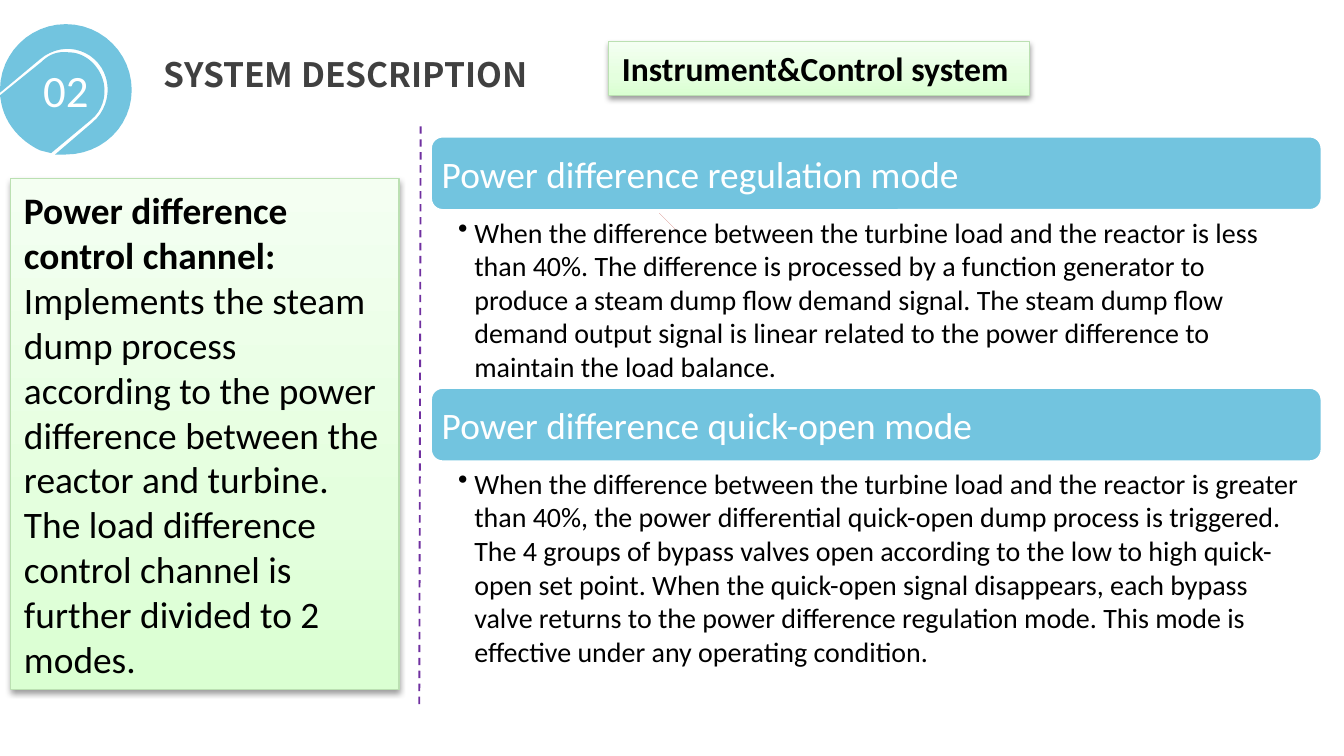
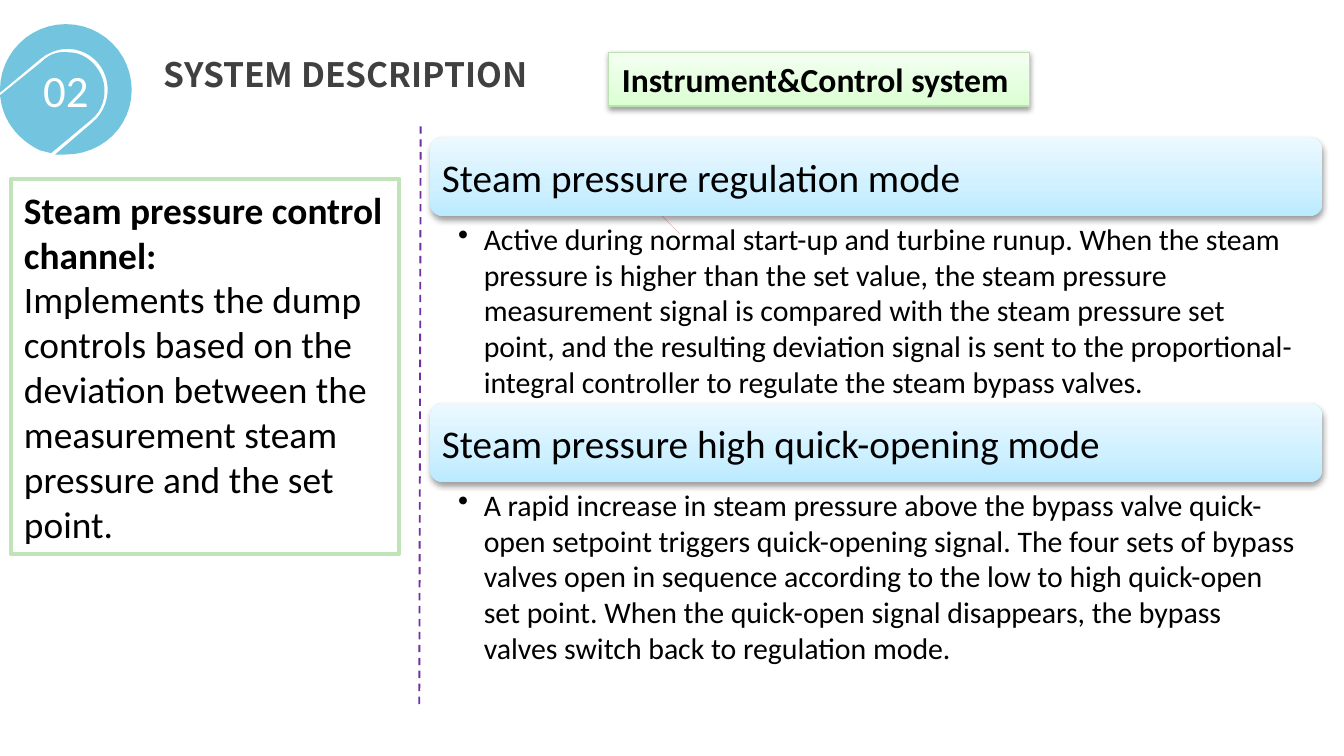
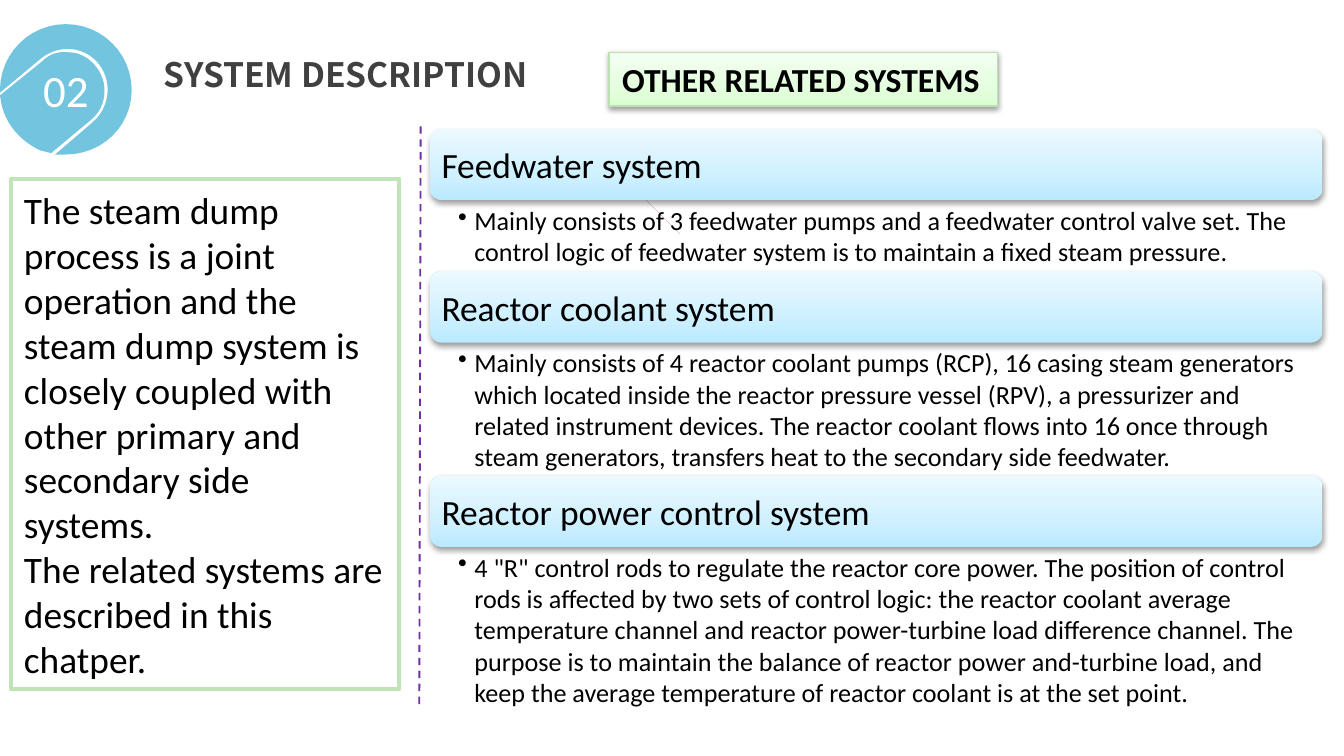
from copy import deepcopy

from lxml.etree import SubElement
from pptx import Presentation
from pptx.dml.color import RGBColor
from pptx.enum.dml import MSO_LINE
from pptx.enum.shapes import MSO_CONNECTOR, MSO_SHAPE
from pptx.enum.text import MSO_ANCHOR, MSO_AUTO_SIZE, PP_ALIGN
from pptx.oxml.ns import qn
from pptx.util import Inches, Pt

BLUE = RGBColor(0x72, 0xC4, 0xDF)
WHITE = RGBColor(0xFF, 0xFF, 0xFF)
BLACK = RGBColor(0x00, 0x00, 0x00)
TITLE_GREY = RGBColor(0x40, 0x40, 0x40)
RED = RGBColor(0xB7, 0x37, 0x2A)
PURPLE = RGBColor(0x70, 0x30, 0xA0)
GREEN_EDGE = RGBColor(0xBB, 0xE0, 0xB2)
PANEL_EDGE = RGBColor(0xC0, 0xE4, 0xB7)
GREEN_STOPS = (RGBColor(0xDA, 0xFF, 0xD2), RGBColor(0xE4, 0xFF, 0xDE), RGBColor(0xF4, 0xFF, 0xF2))
SKY_STOPS = (RGBColor(0xBA, 0xEA, 0xFF), RGBColor(0xCE, 0xF0, 0xFF), RGBColor(0xEC, 0xF9, 0xFF))
STOP_POSITIONS = (0, 0.35, 1)

BODY_FONT = "Calibri"
TITLE_FONT = "Noto Sans CJK SC"

# Each contour is a start point, then lines (one point) and curves (three points).
BADGE_CONTOURS = [
    [(0.51, 0.21),
     [(0.59, 0.21), (0.66, 0.25), (0.71, 0.31)],
     [(0.81, 0.43), (0.8, 0.61), (0.68, 0.71)],
     [(0.38, 0.96)], [(0.3, 0.94)],
     [(0.15, 0.87), (0.04, 0.74), (0.01, 0.59)],
     [(0, 0.53)], [(0.31, 0.28)],
     [(0.37, 0.22), (0.44, 0.2), (0.51, 0.21)]],
    [(0.49, 0),
     [(0.76, 0), (0.98, 0.22), (0.98, 0.49)],
     [(0.98, 0.76), (0.76, 0.97), (0.49, 0.97)],
     [(0.41, 0.97)], [(0.69, 0.73)],
     [(0.82, 0.62), (0.84, 0.42), (0.73, 0.29)],
     [(0.62, 0.16), (0.43, 0.15), (0.3, 0.26)],
     [(0, 0.51)], [(0, 0.49)],
     [(0, 0.22), (0.22, 0), (0.49, 0)]],
]

SLIDES = [
    dict(
        topic="Instrument&Control system", topic_box=(4.53, 0.31, 3.13, 0.4),
        panel=[[("Power difference control channel: ", True),
                ("Implements the steam dump process according to the power difference between "
                 "the reactor and turbine. The load difference control channel is further "
                 "divided to 2 modes.", False)]],
        panel_height=3.8, panel_shaded=True,
        top=1.01, heading_height=0.56, heading_size=20, body_size=15, indent=0.12, shaded=False,
        sections=[
            ("Power difference regulation mode", 1.31,
             "When the difference between the turbine load and the reactor is less than 40%. The "
             "difference is processed by a function generator to produce a steam dump flow demand "
             "signal. The steam dump flow demand output signal is linear related to the power "
             "difference to maintain the load balance."),
            ("Power difference quick-open mode", 1.56,
             "When the difference between the turbine load and the reactor is greater than 40%, "
             "the power differential quick-open dump process is triggered. The 4 groups of bypass "
             "valves open according to the low to high quick-open set point. When the quick-open "
             "signal disappears, each bypass valve returns to the power difference regulation "
             "mode. This mode is effective under any operating condition."),
        ]),
    dict(
        topic="Instrument&Control system", topic_box=(4.53, 0.39, 3.13, 0.4),
        panel=[[("Steam pressure control channel:", True)],
               [("Implements the dump controls based on the deviation between the measurement "
                 "steam pressure and the set point.", False)]],
        panel_height=2.79, panel_shaded=False,
        top=1.02, heading_height=0.59, heading_size=21, body_size=16, indent=0.19, shaded=True,
        sections=[
            ("Steam pressure regulation mode", 1.39,
             "Active during normal start-up and turbine runup. When the steam pressure is higher "
             "than the set value, the steam pressure measurement signal is compared with the "
             "steam pressure set point, and the resulting deviation signal is sent to the "
             "proportional-integral controller to regulate the steam bypass valves."),
            ("Steam pressure high quick-opening mode", 1.4,
             "A rapid increase in steam pressure above the bypass valve quick-open setpoint "
             "triggers quick-opening signal. The four sets of bypass valves open in sequence "
             "according to the low to high quick-open set point. When the quick-open signal "
             "disappears, the bypass valves switch back to regulation mode."),
        ]),
    dict(
        topic="OTHER RELATED SYSTEMS", topic_box=(4.53, 0.39, 2.89, 0.4),
        panel=[[("The steam dump process is a joint operation and the steam dump system is "
                 "closely coupled with other primary and secondary side systems.", False)],
               [("The related systems are described in this chatper.", False)]],
        panel_height=3.8, panel_shaded=False,
        top=0.96, heading_height=0.53, heading_size=19, body_size=14, indent=0.12, shaded=True,
        sections=[
            ("Feedwater system", 0.53,
             "Mainly consists of 3 feedwater pumps and a feedwater control valve set. The control "
             "logic of feedwater system is to maintain a fixed steam pressure."),
            ("Reactor coolant system", 0.99,
             "Mainly consists of 4 reactor coolant pumps (RCP), 16 casing steam generators which "
             "located inside the reactor pressure vessel (RPV), a pressurizer and related "
             "instrument devices. The reactor coolant flows into 16 once through steam "
             "generators, transfers heat to the secondary side feedwater."),
            ("Reactor power control system", 1.22,
             "4 \"R\" control rods to regulate the reactor core power. The position of control "
             "rods is affected by two sets of control logic: the reactor coolant average "
             "temperature channel and reactor power-turbine load difference channel. The purpose "
             "is to maintain the balance of reactor power and-turbine load, and keep the average "
             "temperature of reactor coolant is at the set point."),
        ]),
]


def inches(*values):
    return [Inches(value) for value in values]


def style_font(paragraph, size, color, name=BODY_FONT, bold=None):
    font = paragraph.font
    font.size, font.name, font.bold = Pt(size), name, bold
    font.color.rgb = color


def set_frame(frame, insets=(0.1, 0.05, 0.1, 0.05), anchor=MSO_ANCHOR.TOP, grow=False):
    frame.word_wrap = True
    frame.vertical_anchor = anchor
    frame.auto_size = MSO_AUTO_SIZE.SHAPE_TO_FIT_TEXT if grow else MSO_AUTO_SIZE.NONE
    (frame.margin_left, frame.margin_top,
     frame.margin_right, frame.margin_bottom) = inches(*insets)


def set_look(shape, fill, edge=None, edge_width=0.75):
    shape.shadow.inherit = False
    shape.fill.solid()
    shape.fill.fore_color.rgb = fill
    if edge is None:
        shape.line.fill.background()
    else:
        shape.line.color.rgb = edge
        shape.line.width = Pt(edge_width)


def shade(shape, colors):
    """Fill from the bottom up with a three-stop gradient and drop a soft shadow."""
    shape.fill.gradient()
    shape.fill.gradient_angle = 90
    properties = shape._element.spPr
    stop_list = properties.find(".//" + qn("a:gsLst"))
    stop_list.append(deepcopy(stop_list[0]))
    for stop, position, color in zip(shape.fill.gradient_stops, STOP_POSITIONS, colors):
        stop.position = position
        stop.color.rgb = color
    shadow = SubElement(properties.find(qn("a:effectLst")), qn("a:outerShdw"),
                        blurRad=str(Pt(3.1)), dist=str(Pt(1.6)), dir="5400000", rotWithShape="0")
    shadow_color = SubElement(shadow, qn("a:srgbClr"), val=str(BLACK))
    SubElement(shadow_color, qn("a:alpha"), val="38000")


def flatten(contour, steps=12):
    """Return the contour as points in EMU, with its curves cut into short lines."""
    points = [contour[0]]
    for segment in contour[1:]:
        if len(segment) == 1:
            points += segment
            continue
        knots = [points[-1], *segment]
        for step in range(1, steps + 1):
            t = step / steps
            weights = ((1 - t) ** 3, 3 * t * (1 - t) ** 2, 3 * t * t * (1 - t), t ** 3)
            points.append(tuple(sum(weight * knot[axis] for weight, knot in zip(weights, knots))
                                for axis in (0, 1)))
    return [inches(*point) for point in points]


def add_outline(slide, left, top, contours, color):
    first, *others = [flatten(contour) for contour in contours]
    builder = slide.shapes.build_freeform(*first[0])
    builder.add_line_segments(first[1:], close=True)
    for points in others:
        builder.move_to(*points[0])
        builder.add_line_segments(points[1:], close=True)
    shape = builder.convert_to_shape(*inches(left, top))
    set_look(shape, color)
    return shape


def add_header(slide, left, top):
    badge = add_outline(slide, left, top, BADGE_CONTOURS, BLUE)
    set_frame(badge.text_frame, anchor=MSO_ANCHOR.MIDDLE)
    number = badge.text_frame.paragraphs[0]
    number.text = "02"
    number.alignment = PP_ALIGN.CENTER
    style_font(number, 24, WHITE)

    title_box = slide.shapes.add_textbox(*inches(left + 1.22, top + 0.13, 4.64, 0.39))
    set_frame(title_box.text_frame, insets=(0, 0, 0, 0), grow=True)
    title = title_box.text_frame.paragraphs[0]
    title.text = "SYSTEM DESCRIPTION"
    title.line_spacing = 1.3
    style_font(title, 18, TITLE_GREY, TITLE_FONT, bold=True)


def add_heading(slide, box, text, size, shaded):
    heading = slide.shapes.add_shape(MSO_SHAPE.ROUNDED_RECTANGLE, *inches(*box))
    if shaded:
        set_look(heading, WHITE)
        shade(heading, SKY_STOPS)
    else:
        set_look(heading, BLUE, WHITE, 2)
    set_frame(heading.text_frame, insets=(0.06, 0.05, 0.06, 0.05), anchor=MSO_ANCHOR.MIDDLE)
    paragraph = heading.text_frame.paragraphs[0]
    paragraph.text = text
    paragraph.alignment = PP_ALIGN.LEFT
    style_font(paragraph, size, BLACK if shaded else WHITE)


def add_bullet_text(slide, box, text, size, indent):
    body = slide.shapes.add_textbox(*inches(*box))
    set_frame(body.text_frame, insets=(0.21, 0.03, 0.15, 0.03))
    paragraph = body.text_frame.paragraphs[0]
    paragraph.text = text
    paragraph.level = 1
    style_font(paragraph, size, BLACK)
    properties = paragraph._p.get_or_add_pPr()
    properties.set("marL", str(Inches(indent)))
    properties.set("indent", str(-Inches(indent)))
    bullet = properties.makeelement(qn("a:buChar"), {"char": "•"})
    properties.insert_element_before(bullet, "a:tabLst", "a:defRPr", "a:extLst")


def add_sections(slide, left, width, content):
    """Stack the headings and their bullet texts without gaps."""
    top, heading_height = content["top"], content["heading_height"]
    for heading, body_height, body in content["sections"]:
        add_heading(slide, (left, top, width, heading_height), heading,
                    content["heading_size"], content["shaded"])
        top += heading_height
        add_bullet_text(slide, (left, top, width, body_height), body,
                        content["body_size"], content["indent"])
        top += body_height


def add_divider(slide, start, end):
    divider = slide.shapes.add_connector(MSO_CONNECTOR.STRAIGHT, *inches(*start, *end))
    divider.line.color.rgb = PURPLE
    divider.line.width = Pt(1)
    divider.line.dash_style = MSO_LINE.DASH
    SubElement(divider._element.spPr, qn("a:effectLst"))


def add_text_panel(slide, box, paragraphs, size, shaded, anchor):
    panel = slide.shapes.add_shape(MSO_SHAPE.RECTANGLE, *inches(*box))
    if shaded:
        set_look(panel, WHITE, GREEN_EDGE)
        shade(panel, GREEN_STOPS)
    else:
        set_look(panel, WHITE, PANEL_EDGE, 2)
    frame = panel.text_frame
    set_frame(frame, anchor=anchor, grow=True)
    for index, runs in enumerate(paragraphs):
        paragraph = frame.add_paragraph() if index else frame.paragraphs[0]
        paragraph.alignment = PP_ALIGN.LEFT
        style_font(paragraph, size, BLACK)
        for text, bold in runs:
            run = paragraph.add_run()
            run.text = text
            run.font.bold = bold


def add_content_slide(presentation, content):
    slide = presentation.slides.add_slide(presentation.slide_layouts[6])
    for left, top in ((4.7, 1.38), (4.88, 1.56)):
        add_outline(slide, left, top, [[(0, 0), [(0.18, 0.18)], [(0, 0)]]], RED)
    add_header(slide, 0, 0.18)
    add_sections(slide, 3.2, 6.64, content)
    add_divider(slide, (3.13, 0.94), (3.12, 5.24))
    add_text_panel(slide, (0.08, 1.33, 2.89, content["panel_height"]), content["panel"], 20,
                   content["panel_shaded"], MSO_ANCHOR.MIDDLE)
    add_text_panel(slide, content["topic_box"], [[(content["topic"], True)]], 18,
                   True, MSO_ANCHOR.TOP)


def main():
    presentation = Presentation()
    presentation.slide_width = Inches(10)
    presentation.slide_height = presentation.slide_width * 9 // 16
    for content in SLIDES:
        add_content_slide(presentation, content)
    presentation.save("out.pptx")


if __name__ == "__main__":
    main()
